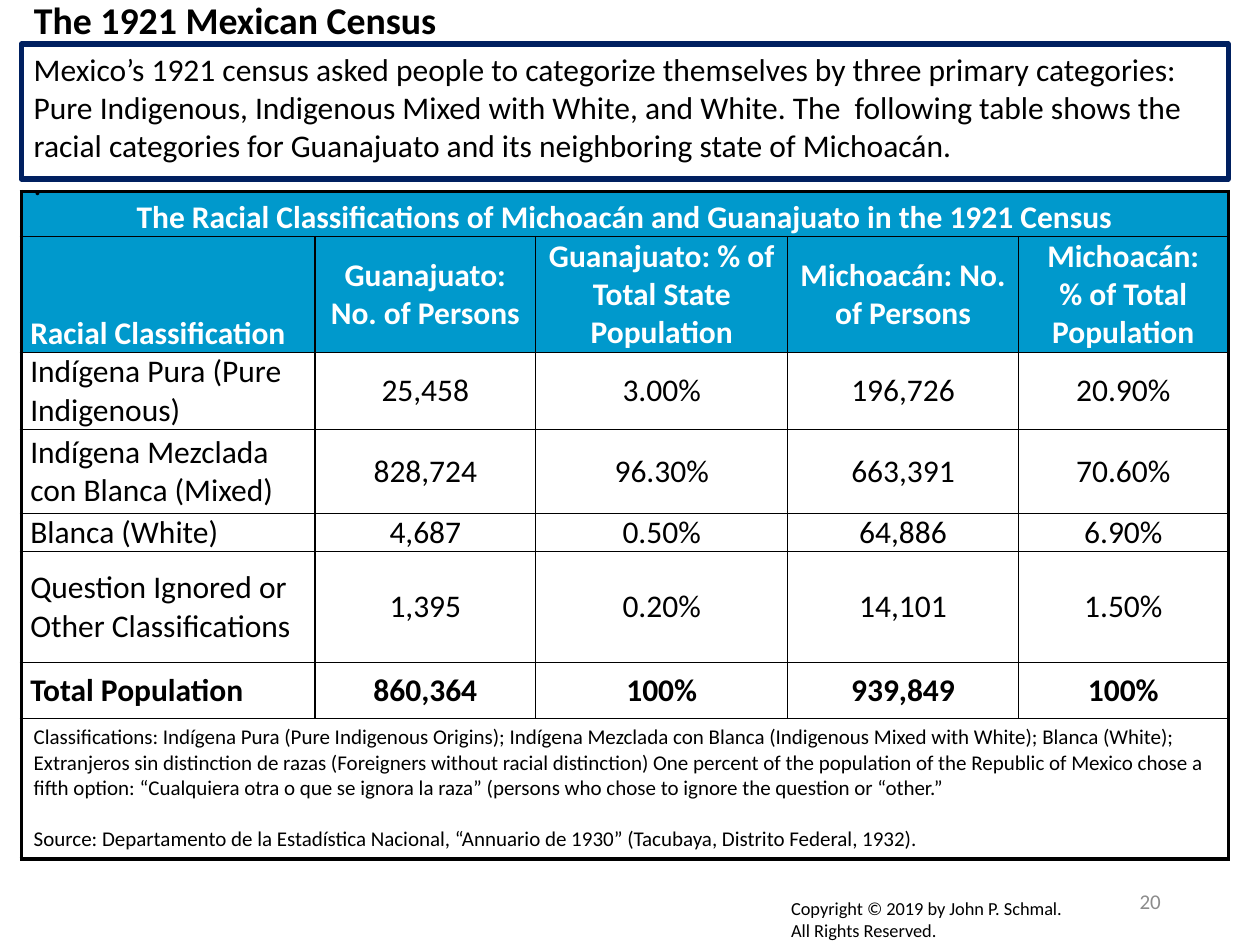
from lxml import etree
from pptx import Presentation
from pptx.dml.color import RGBColor
from pptx.enum.shapes import MSO_SHAPE
from pptx.enum.text import MSO_ANCHOR, PP_ALIGN
from pptx.oxml.ns import qn
from pptx.util import Cm, Pt

LEFT, CENTER, RIGHT = PP_ALIGN.LEFT, PP_ALIGN.CENTER, PP_ALIGN.RIGHT
TOP, MIDDLE, BOTTOM = MSO_ANCHOR.TOP, MSO_ANCHOR.MIDDLE, MSO_ANCHOR.BOTTOM
RECT = MSO_SHAPE.RECTANGLE
TITLE_ONLY = 5

FONT = "Calibri"
BLACK, WHITE, GREY = "000000", "FFFFFF", "8C8C8C"
NAVY, BLUE = "002060", "0099CC"
THIN, THICK = 1, 2.25

INTRO = (
    "Mexico’s 1921 census asked people to categorize themselves by three "
    "primary categories: Pure Indigenous, Indigenous Mixed with White, and "
    "White. The  following table shows the racial categories for Guanajuato "
    "and its neighboring state of Michoacán.\n."
)
HEADING = "The Racial Classifications of Michoacán and Guanajuato in the 1921 Census"
NOTES = (
    "Classifications: Indígena Pura (Pure Indigenous Origins); Indígena "
    "Mezclada con Blanca (Indigenous Mixed with White); Blanca (White); "
    "Extranjeros sin distinction de razas (Foreigners without racial "
    "distinction) One percent of the population of the Republic of Mexico "
    "chose a fifth option: “Cualquiera otra o que se ignora la raza” (persons "
    "who chose to ignore the question or “other.”\n"
    "Source: Departamento de la Estadística Nacional, “Annuario de 1930” "
    "(Tacubaya, Distrito Federal, 1932)."
)
ROWS = [
    [HEADING],
    ["Racial Classification", "Guanajuato: No. of Persons",
     "Guanajuato: % of Total State Population", "Michoacán: No. of Persons",
     "Michoacán:\n% of Total Population"],
    ["Indígena Pura (Pure Indigenous)", "25,458", "3.00%", "196,726", "20.90%"],
    ["Indígena Mezclada con Blanca (Mixed)", "828,724", "96.30%", "663,391", "70.60%"],
    ["Blanca (White)", "4,687", "0.50%", "64,886", "6.90%"],
    ["Question Ignored or Other Classifications", "1,395", "0.20%", "14,101", "1.50%"],
    ["Total Population", "860,364", "100%", "939,849", "100%"],
    [NOTES],
]
WIDTHS = [5.92, 4.45, 5.08, 4.65, 4.23]
HEIGHTS = [0.91, 2.34, 1.55, 1.69, 0.77, 2.24, 1.12, 2.84]


def color(code):
    return RGBColor.from_string(code)


def write(frame, text, size, ink=BLACK, bold=False, align=LEFT):
    frame.text = text
    for para in frame.paragraphs:
        para.alignment = align
        for run in para.runs:
            font = run.font
            font.name, font.size, font.bold = FONT, Pt(size), bold
            font.color.rgb = color(ink)


def add_title(slide, box):
    title = slide.shapes.title
    title.left, title.top, title.width, title.height = map(Cm, box)
    frame = title.text_frame
    write(frame, "The 1921 Mexican Census", 21.6, bold=True)
    frame.vertical_anchor = MIDDLE
    frame.paragraphs[0].line_spacing = 0.9


def add_intro(slide, box):
    panel = slide.shapes.add_shape(RECT, *map(Cm, box))
    panel.shadow.inherit = False
    panel.fill.background()
    panel.line.color.rgb = color(NAVY)
    panel.line.width = Pt(3)
    panel.text_frame.vertical_anchor = TOP
    write(panel.text_frame, INTRO, 18)


def add_label(slide, box, text, size, ink=BLACK, align=LEFT, anchor=TOP, wrap=True):
    frame = slide.shapes.add_textbox(*map(Cm, box)).text_frame
    frame.word_wrap = wrap
    frame.vertical_anchor = anchor
    write(frame, text, size, ink, align=align)


def set_edges(cell, edges):
    """Draw cell borders from pairs of side and width in points."""
    props = cell._tc.get_or_add_tcPr()
    for side, width in edges:
        line = etree.SubElement(props, qn(f"a:ln{side}"), w=str(Pt(width)))
        fill = etree.SubElement(line, qn("a:solidFill"))
        etree.SubElement(fill, qn("a:srgbClr"), val=BLACK)


def add_census(slide, box):
    last_row, last_col = len(ROWS) - 1, len(WIDTHS) - 1
    table = slide.shapes.add_table(len(ROWS), len(WIDTHS), *map(Cm, box)).table
    for col, width in zip(table.columns, WIDTHS):
        col.width = Cm(width)
    for row, height in zip(table.rows, HEIGHTS):
        row.height = Cm(height)

    for r, texts in enumerate(ROWS):
        head, notes, single = r < 2, r == last_row, len(texts) == 1
        if single:
            table.cell(r, 0).merge(table.cell(r, last_col))
        for c, text in enumerate(texts):
            cell = table.cell(r, c)
            outer = {"L": c == 0, "R": single or c == last_col,
                     "T": r == 0, "B": notes}
            set_edges(cell, [(side, THICK if edge else THIN)
                             for side, edge in outer.items()])
            if head:
                cell.fill.solid()
                cell.fill.fore_color.rgb = color(BLUE)
            else:
                cell.fill.background()
            side, end = (0.25, 0.13) if notes else (0.18, 0)
            cell.margin_left = cell.margin_right = Cm(side)
            cell.margin_top = cell.margin_bottom = Cm(end)
            cell.vertical_anchor = (TOP if notes else
                                    BOTTOM if head and c == 0 else MIDDLE)
            write(cell.text_frame, text, 12 if notes else 18,
                  WHITE if head else BLACK, head or r == last_row - 1,
                  CENTER if c or r == 0 else LEFT)
    table.cell(last_row, 0).text_frame.paragraphs[1].space_before = Pt(14.4)


def main():
    deck = Presentation()
    deck.slide_width, deck.slide_height = Cm(25.4), Cm(19.05)
    slide = deck.slides.add_slide(deck.slide_layouts[TITLE_ONLY])
    left, width = 0.43, 24.33
    add_title(slide, (left, 0, 22.66, 0.89))
    add_label(slide, (17.93, 17.65, 5.72, 1.02), "20", 12, GREY, RIGHT, MIDDLE)
    add_census(slide, (left, 3.86, width, sum(HEIGHTS)))
    add_label(slide, (15.7, 17.96, 6.3, 1.14),
              "Copyright © 2019 by John P. Schmal.\nAll Rights Reserved.",
              10.5, wrap=False)
    add_intro(slide, (left, 0.89, width, 2.72))
    deck.save("out.pptx")


if __name__ == "__main__":
    main()
